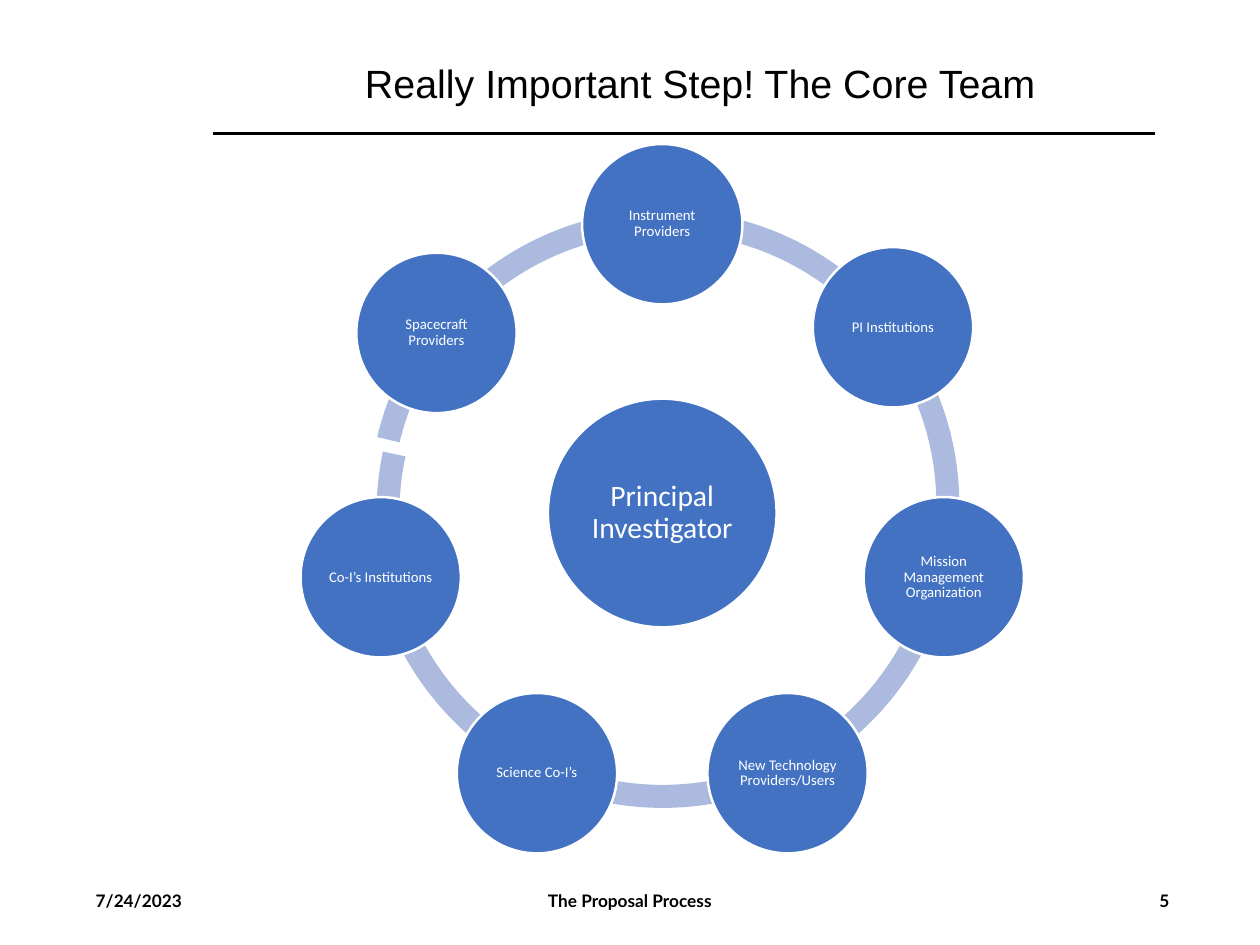
import math

import pptx
import pptx.dml.color
import pptx.enum.shapes
import pptx.enum.text
import pptx.oxml.ns
import pptx.util
from lxml import etree

Pt = pptx.util.Pt
SHAPE = pptx.enum.shapes.MSO_SHAPE
ALIGN = pptx.enum.text.PP_ALIGN
ANCHOR = pptx.enum.text.MSO_ANCHOR

COLOURS = {"black": "000000", "white": "FFFFFF", "circle": "4372C3", "ring": "ABBADE"}
CENTRE_X, CENTRE_Y = 538.2, 416.9
ORBIT = 234.7
RING_SIZE = 479.5
RING_LEFT, RING_TOP = 298.8, 177.1
STEP = 360 / 7
MEMBERS = [
    "Instrument Providers",
    "PI Institutions",
    "Mission Management Organization",
    "New Technology Providers/Users",
    "Science Co-I’s",
    "Co-I’s Institutions",
    "Spacecraft Providers",
]
NUDGES = {"PI Institutions": (4, -4.6)}


def rgb(name):
    """Return the named colour."""
    return pptx.dml.color.RGBColor.from_string(COLOURS[name])


def write_text(shape, text, *, size, font, colour="black", bold=False,
               align=ALIGN.LEFT, anchor=ANCHOR.MIDDLE, inset=3.6, spacing=1.0):
    """Put one formatted paragraph into a shape."""
    frame = shape.text_frame
    frame.word_wrap = True
    frame.vertical_anchor = anchor
    frame.margin_left = frame.margin_right = Pt(inset)
    frame.margin_top = frame.margin_bottom = Pt(inset)
    paragraph = frame.paragraphs[0]
    paragraph.alignment = align
    paragraph.line_spacing = spacing
    run = paragraph.add_run()
    run.text = text
    run.font.size = Pt(size)
    run.font.name = font
    run.font.bold = bold
    run.font.color.rgb = rgb(colour)


def add_label(slide, text, left, top, width, height, **text_format):
    """Add a text box that grows with its text."""
    label = slide.shapes.add_textbox(Pt(left), Pt(top), Pt(width), Pt(height))
    write_text(label, text, **text_format)
    label.text_frame.auto_size = pptx.enum.text.MSO_AUTO_SIZE.SHAPE_TO_FIT_TEXT


def add_rule(slide, left, right, y):
    """Draw the line under the title."""
    rule = slide.shapes.add_connector(
        pptx.enum.shapes.MSO_CONNECTOR.STRAIGHT, Pt(left), Pt(y), Pt(right), Pt(y))
    rule.line.color.rgb = rgb("black")
    rule.line.width = Pt(2)
    properties = rule._element.spPr
    etree.SubElement(properties, pptx.oxml.ns.qn("a:effectLst"))


def add_ring_arc(slide, start, end, shift_x=0, shift_y=0):
    """Draw a ring segment between two angles in degrees."""
    arc = slide.shapes.add_shape(
        SHAPE.BLOCK_ARC, Pt(RING_LEFT + shift_x), Pt(RING_TOP + shift_y),
        Pt(RING_SIZE), Pt(RING_SIZE))
    arc.adjustments[0] = start * 0.6
    arc.adjustments[1] = end * 0.6
    arc.adjustments[2] = 0.039
    arc.shadow.inherit = False
    arc.fill.solid()
    arc.fill.fore_color.rgb = rgb("ring")
    arc.line.fill.background()


def add_circle(slide, text, x, y, diameter, size, inset):
    """Draw a labelled circle around a centre point."""
    circle = slide.shapes.add_shape(
        SHAPE.OVAL, Pt(x - diameter / 2), Pt(y - diameter / 2), Pt(diameter), Pt(diameter))
    circle.shadow.inherit = False
    circle.fill.solid()
    circle.fill.fore_color.rgb = rgb("circle")
    circle.line.color.rgb = rgb("white")
    circle.line.width = Pt(2)
    write_text(circle, text, size=size, font="Calibri", colour="white",
               align=ALIGN.CENTER, inset=inset, spacing=0.9)


def add_team(slide):
    """Draw the ring, the investigator and the surrounding members."""
    for index in reversed(range(5)):
        start = (index + 0.25) * STEP * 0.6
        add_ring_arc(slide, start, start + STEP * 0.6)
    add_ring_arc(slide, 193.29, 8.77, shift_x=1.4, shift_y=-6.5)
    add_ring_arc(slide, 160.93, 191.99, shift_x=7.2)
    add_circle(slide, "Principal Investigator", CENTRE_X, CENTRE_Y, 185.8, 24, 2.2)
    for index, member in enumerate(MEMBERS):
        angle = math.radians(index * STEP - 90)
        nudge_x, nudge_y = NUDGES.get(member, (0, 0))
        add_circle(slide, member, CENTRE_X + ORBIT * math.cos(angle) + nudge_x,
                   CENTRE_Y + ORBIT * math.sin(angle) + nudge_y, 130.3, 12, 1.4)


def main():
    """Build and save the core team slide."""
    deck = pptx.Presentation()
    deck.slide_width, deck.slide_height = Pt(1024), Pt(768)
    slide = deck.slides.add_slide(deck.slide_layouts[6])
    add_rule(slide, 173.5, 938.9, 108.7)
    footers = [
        ("The Proposal Process", 342.7, 338.4, ALIGN.CENTER),
        ("7/24/2023", 74.2, 223.2, ALIGN.LEFT),
        ("5", 936.7, 17.3, ALIGN.RIGHT),
    ]
    for text, left, width, align in footers:
        add_label(slide, text, left, 720, width, 24.5,
                  size=14, font="Lato", bold=True, align=align)
    add_team(slide)
    add_label(slide, "Really Important Step! The Core Team", 293, 44.6, 570.2, 46,
              size=32, font="Arial", anchor=ANCHOR.TOP)
    deck.save("out.pptx")


if __name__ == "__main__":
    main()
